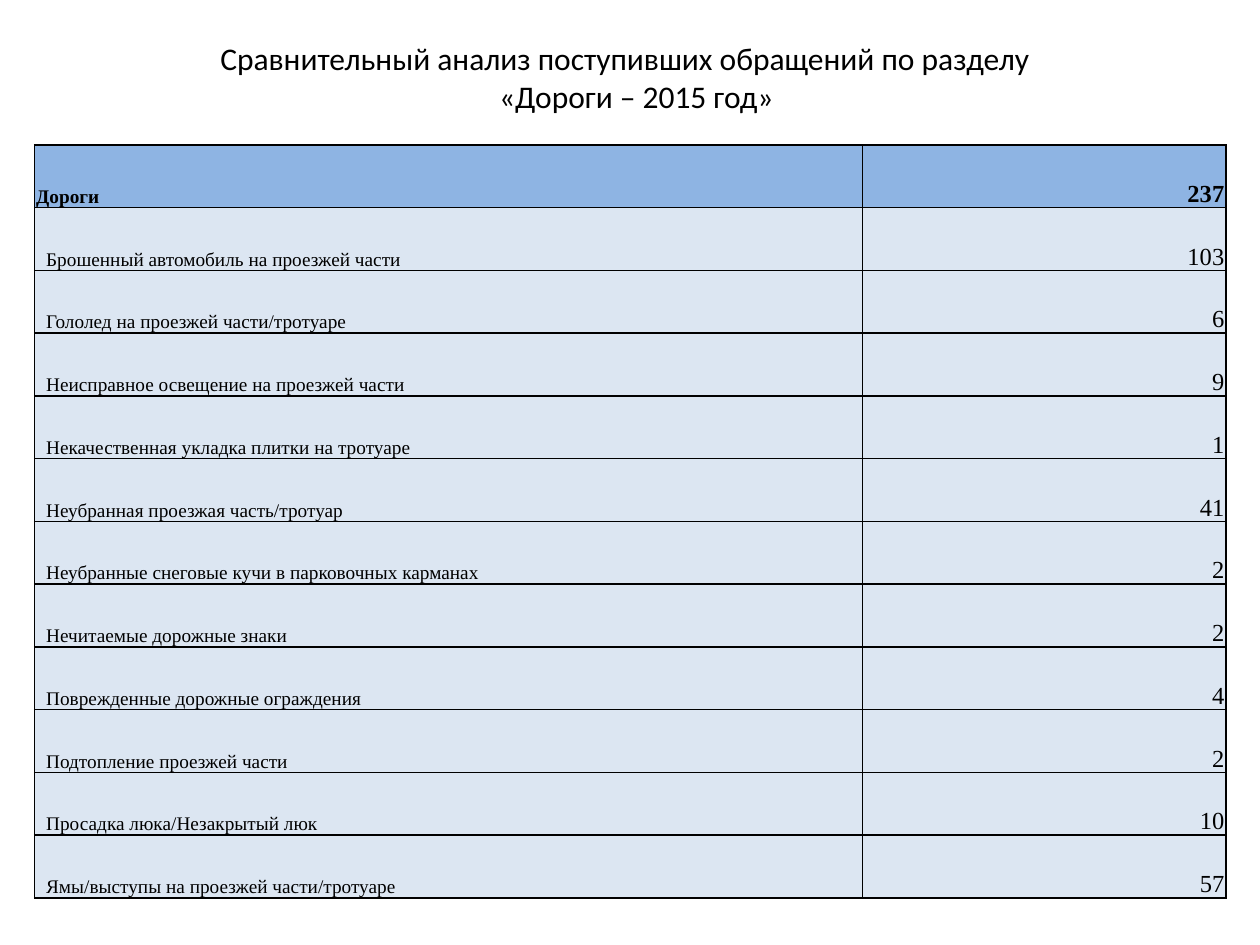
from dataclasses import dataclass

from lxml import etree
from pptx import Presentation
from pptx.dml.color import RGBColor
from pptx.enum.text import MSO_ANCHOR, PP_ALIGN
from pptx.oxml.ns import qn
from pptx.util import Cm, Pt

TOP, LOW = MSO_ANCHOR.TOP, MSO_ANCHOR.BOTTOM
LEFT, MID, RIGHT = PP_ALIGN.LEFT, PP_ALIGN.CENTER, PP_ALIGN.RIGHT
BLANK = 6


@dataclass(frozen=True)
class Theme:
    ink: str = "000000"
    head: str = "8EB4E3"
    body: str = "DCE6F2"
    title_font: str = "Calibri"
    cell_font: str = "Times New Roman"
    title_size: int = 18
    label_size: int = 11
    value_size: int = 14
    rule: int = 1


TITLE = [
    # text, left and right margin in cm
    ("Сравнительный анализ поступивших обращений по разделу", 0, 0.2),
    ("«Дороги – 2015 год»", 0.26, 0),
]

ROWS = [
    ("Дороги", 237),
    ("Брошенный автомобиль на проезжей части", 103),
    ("Гололед на проезжей части/тротуаре", 6),
    ("Неисправное освещение на проезжей части", 9),
    ("Некачественная укладка плитки на тротуаре", 1),
    ("Неубранная проезжая часть/тротуар", 41),
    ("Неубранные снеговые кучи в парковочных карманах", 2),
    ("Нечитаемые дорожные знаки", 2),
    ("Поврежденные дорожные ограждения", 4),
    ("Подтопление проезжей части", 2),
    ("Просадка люка/Незакрытый люк", 10),
    ("Ямы/выступы на проезжей части/тротуаре", 57),
]


class Page:
    def __init__(self, slide, theme):
        self.slide = slide
        self.theme = theme

    def style(self, para, font, size, align, bold=False):
        para.alignment = align
        para.font.name = font
        para.font.size = Pt(size)
        para.font.bold = bold
        para.font.color.rgb = RGBColor.from_string(self.theme.ink)

    def title(self, lines, left, top, width, height):
        box = self.slide.shapes.add_textbox(Cm(left), Cm(top), Cm(width), Cm(height))
        frame = box.text_frame
        frame.word_wrap = True
        frame.vertical_anchor = TOP
        frame.margin_top = Cm(0.03)
        for i, (text, before, after) in enumerate(lines):
            para = frame.add_paragraph() if i else frame.paragraphs[0]
            para.text = text
            self.style(para, self.theme.title_font, self.theme.title_size, MID)
            props = para._p.get_or_add_pPr()
            props.set("marL", str(Cm(before)))
            props.set("marR", str(Cm(after)))

    def border(self, cell):
        props = cell._tc.get_or_add_tcPr()
        for i, side in enumerate(("lnL", "lnR", "lnT", "lnB")):
            line = etree.Element(qn(f"a:{side}"), w=str(Pt(self.theme.rule)))
            fill = etree.SubElement(line, qn("a:solidFill"))
            etree.SubElement(fill, qn("a:srgbClr"), val=self.theme.ink)
            props.insert(i, line)

    def cell(self, cell, text, size, align, head, inset):
        cell.text = text
        cell.vertical_anchor = LOW
        cell.margin_left = Cm(inset)
        cell.margin_right = cell.margin_top = Cm(0.03)
        cell.margin_bottom = 0
        cell.fill.solid()
        color = self.theme.head if head else self.theme.body
        cell.fill.fore_color.rgb = RGBColor.from_string(color)
        self.style(cell.text_frame.paragraphs[0], self.theme.cell_font, size, align, head)
        self.border(cell)

    def table(self, rows, left, top, widths, height):
        frame = self.slide.shapes.add_table(
            len(rows), len(widths), Cm(left), Cm(top), Cm(sum(widths)), Cm(height))
        table = frame.table
        table.first_row = table.horz_banding = False
        for col, width in zip(table.columns, widths):
            col.width = Cm(width)
        for i, (label, value) in enumerate(rows):
            head = i == 0
            table.rows[i].height = Cm(height / len(rows))
            self.cell(table.cell(i, 0), label, self.theme.label_size, LEFT,
                      head, 0.03 if head else 0.23)
            self.cell(table.cell(i, 1), str(value), self.theme.value_size, RIGHT,
                      head, 0.03)


def main():
    deck = Presentation()
    deck.slide_width, deck.slide_height = Cm(25.4), Cm(19.05)
    page = Page(deck.slides.add_slide(deck.slide_layouts[BLANK]), Theme())

    # Heading
    page.title(TITLE, 1.27, 0.76, 22.86, 3.18)

    # Requests by topic
    page.table(ROWS, 0.7, 2.92, (16.69, 7.32), 15.19)

    deck.save("out.pptx")


if __name__ == "__main__":
    main()
